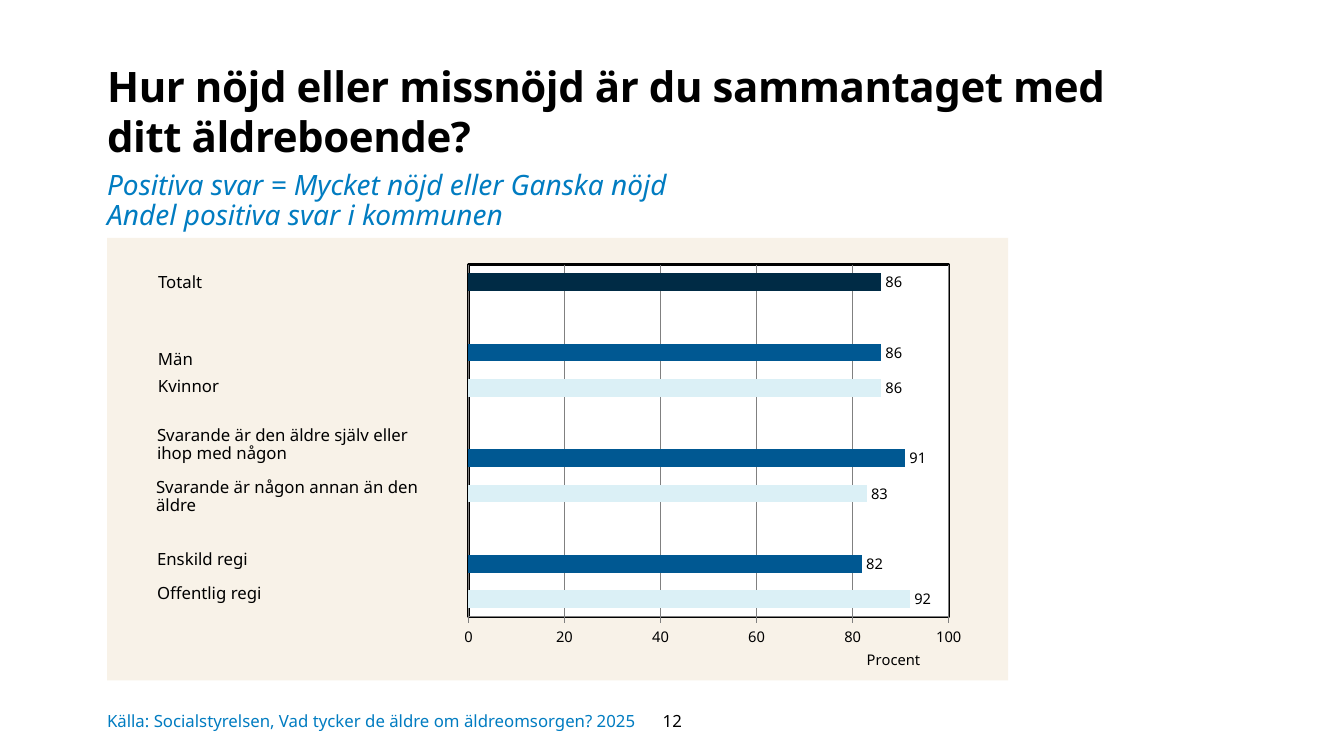
from dataclasses import dataclass

from pptx import Presentation
from pptx.chart.data import CategoryChartData
from pptx.dml.color import RGBColor
from pptx.enum.chart import XL_CHART_TYPE as ChartType
from pptx.enum.chart import XL_LABEL_POSITION as LabelPosition
from pptx.enum.chart import XL_TICK_MARK as TickMark
from pptx.enum.text import MSO_ANCHOR as Anchor
from pptx.enum.text import MSO_AUTO_SIZE as AutoSize
from pptx.enum.text import PP_ALIGN as Align
from pptx.oxml import parse_xml
from pptx.oxml.ns import nsdecls, qn
from pptx.util import Pt


@dataclass(frozen=True)
class Theme:
    font: str = "Noto Sans"
    ink: str = "000000"
    accent: str = "017CC1"
    panel: str = "F8F2E8"
    plot: str = "FFFFFF"
    grid: str = "808080"
    total: str = "002B45"
    first: str = "005892"
    second: str = "DBF0F6"
    title_size: float = 30
    subtitle_size: float = 20
    label_size: float = 12
    chart_size: float = 10.5


def apply(target, values):
    for name, value in values.items():
        setattr(target, name, value)


def shape_xml(fill, line):
    return parse_xml(
        f'<c:spPr {nsdecls("c", "a")}><a:solidFill><a:srgbClr val="{fill}"/>'
        f'</a:solidFill>{line}</c:spPr>')


def layout_xml(x, y, size=None):
    inner = '<c:layoutTarget val="inner"/>' if size else ""
    extent = f'<c:w val="{size[0]}"/><c:h val="{size[1]}"/>' if size else ""
    return parse_xml(
        f'<c:layout {nsdecls("c")}><c:manualLayout>{inner}'
        f'<c:xMode val="edge"/><c:yMode val="edge"/>'
        f'<c:x val="{x}"/><c:y val="{y}"/>{extent}</c:manualLayout></c:layout>')


def set_layout(parent, layout, index):
    for old in parent.findall(qn("c:layout")):
        parent.remove(old)
    parent.insert(index, layout)


class SlideBuilder:
    def __init__(self, slide, theme):
        self.slide = slide
        self.theme = theme

    def style(self, font, size, color=None, **extra):
        apply(font, dict(name=self.theme.font, size=Pt(size), **extra))
        font.color.rgb = RGBColor.from_string(color or self.theme.ink)

    def fill_text(self, shape, box, lines, size, color=None, insets=None,
                  anchor=Anchor.TOP, fit=AutoSize.NONE, spacing=1.0,
                  align=Align.LEFT, **font):
        apply(shape, dict(zip(("left", "top", "width", "height"), map(Pt, box))))
        frame = shape.text_frame
        apply(frame, dict(word_wrap=True, vertical_anchor=anchor, auto_size=fit))
        if insets:
            sides = ("margin_left", "margin_top", "margin_right", "margin_bottom")
            apply(frame, dict(zip(sides, map(Pt, insets))))
        frame.text = lines
        for paragraph in frame.paragraphs:
            apply(paragraph, dict(line_spacing=spacing, alignment=align))
            for run in paragraph.runs:
                self.style(run.font, size, color, **font)
        return frame

    def title(self, box, words):
        frame = self.fill_text(self.slide.shapes.title, box, words,
                               self.theme.title_size, insets=(0, 0, 7.2, 3.6), bold=True)
        for run in frame.paragraphs[0].runs:
            run.font._element.set("spc", "-30")

    def text(self, box, lines, size, **options):
        shape = self.slide.shapes.add_textbox(*map(Pt, box))
        self.fill_text(shape, box, lines, size, **options)

    def bar_chart(self, box, values, colors):
        theme = self.theme
        data = CategoryChartData()
        data.categories = [str(n) for n in range(1, len(values) + 1)]
        data.add_series("Series 1", values)
        chart = self.slide.shapes.add_chart(
            ChartType.BAR_CLUSTERED, *map(Pt, box), data).chart
        apply(chart, dict(has_legend=False, has_title=False))
        self.style(chart.font, theme.chart_size)

        # Bars and their values
        plot = chart.plots[0]
        apply(plot, dict(gap_width=100, overlap=-25, vary_by_categories=False,
                         has_data_labels=True))
        apply(plot.data_labels, dict(show_value=True, position=LabelPosition.OUTSIDE_END))
        self.style(plot.data_labels.font, theme.chart_size)
        for index, color in enumerate(colors):
            if color:
                fill = plot.series[0].points[index].format.fill
                fill.solid()
                fill.fore_color.rgb = RGBColor.from_string(color)

        # Axes
        chart.category_axis.visible = False
        percent = chart.value_axis
        apply(percent, dict(minimum_scale=0, maximum_scale=100, major_unit=20,
                            has_major_gridlines=True, has_title=True,
                            major_tick_mark=TickMark.OUTSIDE))
        for line in (percent.format.line, percent.major_gridlines.format.line):
            line.width = Pt(0.75)
            line.color.rgb = RGBColor.from_string(theme.grid)
        self.style(percent.tick_labels.font, theme.chart_size)
        caption = percent.axis_title.text_frame
        caption.text = "Procent"
        self.style(caption.paragraphs[0].runs[0].font, theme.chart_size, bold=False)
        set_layout(percent.axis_title._element, layout_xml(0.84, 0.92), 1)

        # Panel and plot area
        chart_part = chart._chartSpace.find(qn("c:chart"))
        chart_part.addnext(shape_xml(theme.panel, "<a:ln><a:noFill/></a:ln>"))
        area = chart_part.find(qn("c:plotArea"))
        set_layout(area, layout_xml(0.401, 0.06, (0.533, 0.796)), 0)
        area.append(shape_xml(
            theme.plot, f'<a:ln w="{Pt(1.5)}"><a:solidFill>'
            f'<a:srgbClr val="{theme.ink}"/></a:solidFill></a:ln>'))


def main():
    theme = Theme()
    deck = Presentation()
    apply(deck, dict(slide_width=Pt(960), slide_height=Pt(540)))
    page = SlideBuilder(deck.slides.add_slide(deck.slide_layouts[5]), theme)
    left = 76.5

    # Heading
    page.title((left, 43.2, 726.5, 79.2),
               "Hur nöjd eller missnöjd är du sammantaget med ditt äldreboende?")
    page.text((left, 122.4, 654.5, 44),
              "Positiva svar = Mycket nöjd eller Ganska nöjd\vAndel positiva svar i kommunen",
              theme.subtitle_size, color=theme.accent, insets=(0, 0, 0, 0),
              spacing=0.9, italic=True)

    # Chart, from the bottom bar up
    bar_colors = [theme.second, theme.first, None] * 3 + [theme.total]
    page.bar_chart((left, 170, 643.7, 316),
                   (92, 82, None, 83, 91, None, 86, 86, None, 86), bar_colors)

    # Bar labels
    bar_labels = [
        (105.8, 192.2, 71, "Totalt"),
        (105.8, 247, 128, "Män"),
        (105.8, 266.4, 144, "Kvinnor"),
        (105.1, 301.7, 272, "Svarande är den äldre själv eller\nihop med någon"),
        (104.4, 338.4, 271, "Svarande är någon annan än den\näldre"),
        (105.1, 390.2, 198, "Enskild regi"),
        (105.1, 414, 221, "Offentlig regi"),
    ]
    for x, y, width, label in bar_labels:
        height = 36 if "\n" in label else 21.6
        page.text((x, y, width, height), label, theme.label_size,
                  fit=AutoSize.SHAPE_TO_FIT_TEXT, spacing=0.9)

    # Footer
    page.text((left, 496, 633.6, 37.4),
              "Källa: Socialstyrelsen, Vad tycker de äldre om äldreomsorgen? 2025",
              theme.label_size, color=theme.accent, insets=(0, 0, 0, 0),
              anchor=Anchor.MIDDLE)
    page.text((443.5, 500.4, 73.4, 28.8), "12", theme.label_size,
              anchor=Anchor.MIDDLE, align=Align.CENTER)

    deck.save("out.pptx")


if __name__ == "__main__":
    main()
